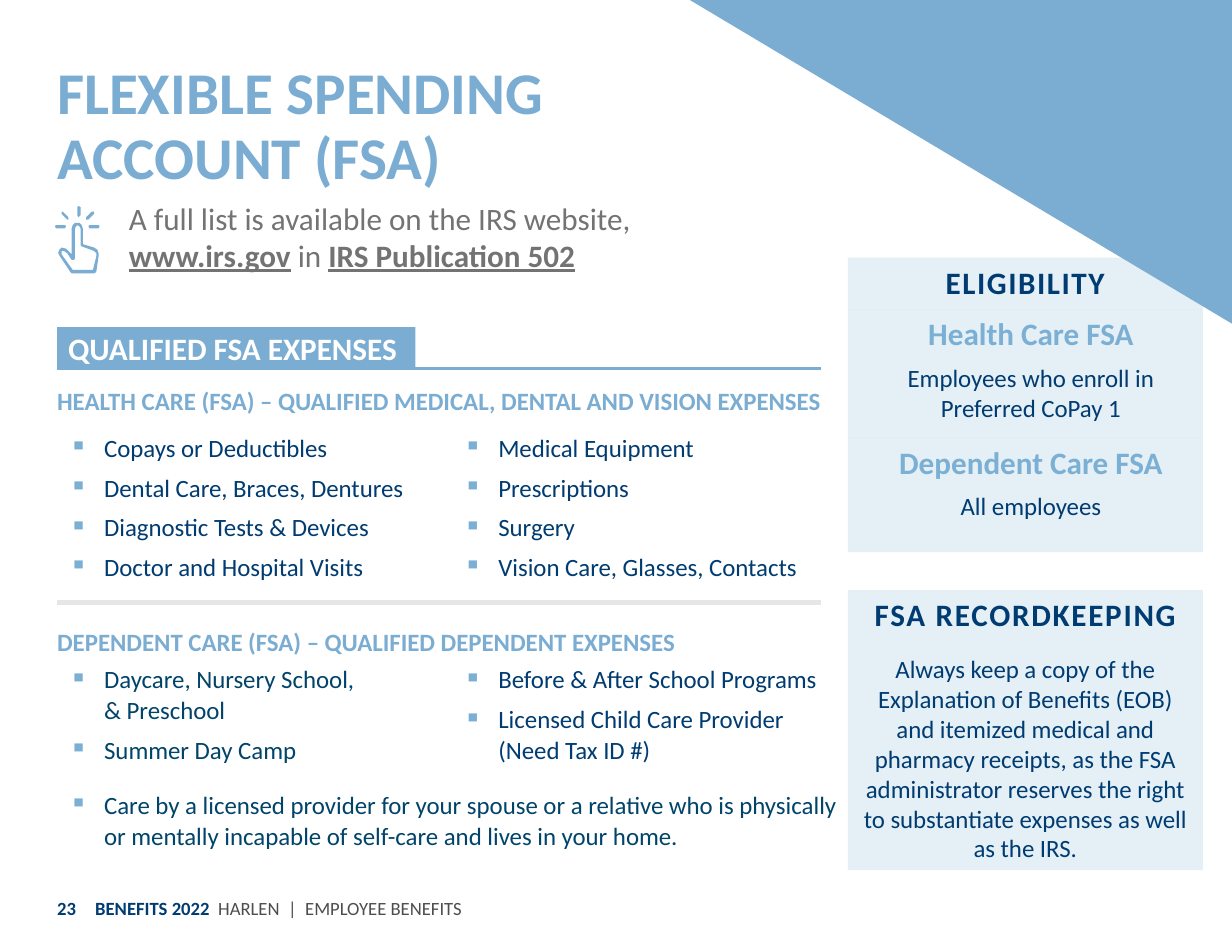
"""Build the flexible spending account benefits slide."""
from lxml import etree
from pptx import Presentation, util as u
from pptx.dml.color import RGBColor
from pptx.enum import shapes, text
from pptx.oxml.ns import qn

C = {"blue": "7BADD3", "sky": "7BAFD4", "navy": "003C71", "foot": "003B71", "teal": "00446A",
     "grey": "737373", "dark": "4D4D4E", "rule": "E6E6E6", "white": "FFFFFF"}
NO_GRID = "{2D5ABB26-0587-4C30-8999-92F81FD0307C}"
TOP, MIDDLE, BOTTOM = (text.MSO_ANCHOR.TOP, text.MSO_ANCHOR.MIDDLE, text.MSO_ANCHOR.BOTTOM)
CENTER = text.PP_ALIGN.CENTER
NONE, PAD, BOX, FOOT = (0, 0), (0.11, 0.06), (0.1, 0.05), (0, 0.05)
LEFT = 0.51

TITLE = "FLEXIBLE SPENDING ACCOUNT (FSA)"
INTRO = [("A full list is available on the IRS website,\n", False), ("www.irs.gov", True),
         (" in ", False), ("IRS Publication 502", True)]
BANNER = "QUALIFIED FSA EXPENSES"
EXPENSES = [
    (0.35, "HEALTH CARE (FSA) – QUALIFIED MEDICAL, DENTAL AND VISION EXPENSES", MIDDLE),
    (1.56, [("navy", ["Copays or Deductibles", "Dental Care, Braces, Dentures",
                      "Diagnostic Tests & Devices", "Doctor and Hospital Visits"]),
            ("navy", ["Medical Equipment", "Prescriptions", "Surgery",
                      "Vision Care, Glasses, Contacts"])], MIDDLE),
    (0.56, "DEPENDENT CARE (FSA) – QUALIFIED DEPENDENT EXPENSES", BOTTOM),
    (0.98, [("teal", ["Daycare, Nursery School,\n& Preschool", "Summer Day Camp"]),
            ("navy", ["Before & After School Programs",
                      "Licensed Child Care Provider\n(Need Tax ID #)"])], MIDDLE),
    (0.87, [("teal", ["Care by a licensed provider for your spouse or a relative who is "
                      "physically\nor mentally incapable of self-care and lives in your home."])],
     MIDDLE),
]
ELIGIBILITY = [
    (0.45, [("ELIGIBILITY", 20, "navy", True, 1)], MIDDLE),
    (1.15, [("Health Care FSA", 20, "sky", True),
            ("Employees who enroll in\nPreferred CoPay 1", 16, "navy")], TOP),
    (1.02, [("Dependent Care FSA", 20, "sky", True), ("All employees", 16, "navy")], TOP),
]
RECORDS = [
    ("FSA RECORDKEEPING", 20, "navy", True, 1.1),
    ("Always keep a copy of the Explanation of Benefits (EOB) and itemized medical and pharmacy "
     "receipts, as the FSA administrator reserves the right to substantiate expenses as well "
     "as the IRS.", 16, "navy"),
]
FOOTER = [("BENEFITS 2022", 12, "foot", True), (" ", 12, "foot", True, 2.7),
          ("HARLEN", 12, "dark"), (" |", 12, "dark", False, 2.7),
          (" EMPLOYEE BENEFITS", 12, "dark")]
HAND = [
    [(84, 244), (64, 244), (63, 243), (53, 228), (52, 226), (53, 223), (55, 221), (59, 222),
     (64, 227), (64, 204), (65, 201), (67, 199), (71, 199), (73, 201), (74, 204), (74, 218),
     (84, 221), (87, 223), (88, 226), (88, 229), (86, 243)],
    [(65, 241), (83, 241), (86, 229), (86, 226), (84, 224), (73, 220), (72, 219), (72, 204),
     (71, 202), (69, 201), (68, 202), (67, 204), (67, 231), (66, 232), (64, 232), (60, 226),
     (57, 224), (55, 224), (55, 227)],
]
RAYS = [
    [(88, 204), (80, 204), (79, 202), (80, 201), (88, 201), (89, 202)],
    [(78, 196), (77, 196), (77, 194), (82, 189), (84, 189), (84, 191), (79, 196)],
    [(70, 194), (69, 192), (69, 185), (70, 184), (72, 185), (72, 192)],
    [(60, 196), (55, 191), (55, 189), (56, 189), (61, 194), (61, 196)],
    [(58, 204), (50, 204), (49, 202), (50, 201), (58, 201), (59, 202)],
]


def rgb(name):
    return RGBColor.from_string(C[name])


def place(sp, *box):
    sp.left, sp.top, sp.width, sp.height = map(u.Inches, box)


def add_run(p, words, size, color, bold=False, spacing=0, underline=False):
    for i, line in enumerate(words.split("\n")):
        if i:
            p.add_line_break()
            br = p._p.findall(qn("a:br"))[-1]
            etree.SubElement(br, qn("a:rPr"), sz=str(size * 100))
        if not line:
            continue
        r = p.add_run()
        r.text = line
        f = r.font
        f.name, f.size, f.bold, f.underline = "Calibri", u.Pt(size), bold, underline
        f.color.rgb = rgb(color)
        if spacing:
            r._r.get_or_add_rPr().set("spc", str(round(spacing * 100)))


def indent(p, margin, hang=0, bullet=None):
    pPr = p._p.get_or_add_pPr()
    pPr.set("marL", str(u.Inches(margin)))
    pPr.set("indent", str(u.Inches(-hang)))
    if bullet:
        clr = etree.SubElement(pPr, qn("a:buClr"))
        etree.SubElement(clr, qn("a:srgbClr"), val=C["sky"])
        etree.SubElement(pPr, qn("a:buChar"), char=bullet)
    else:
        etree.SubElement(pPr, qn("a:buNone"))


def paragraphs(tf, items, before=6):
    for i, runs in enumerate(items):
        p = tf.add_paragraph() if i else tf.paragraphs[0]
        p.space_before = u.Pt(before if i else 0)
        for run in runs:
            add_run(p, *run)
    return tf.paragraphs


def frame(tf, inset, anchor=TOP):
    tf.margin_left = tf.margin_right = u.Inches(inset[0])
    tf.margin_top = tf.margin_bottom = u.Inches(inset[1])
    tf.vertical_anchor = anchor
    if hasattr(tf, "word_wrap"):
        tf.word_wrap = True
        tf.auto_size = text.MSO_AUTO_SIZE.NONE


def tint(fill, name, alpha=None):
    fill.solid()
    fill.fore_color.rgb = rgb(name)
    if alpha:
        clr = fill._xPr.find(".//" + qn("a:srgbClr"))
        etree.SubElement(clr, qn("a:alpha"), val=str(alpha * 1000))


def add_shape(s, kind, box, color, alpha=None):
    sp = s.shapes.add_shape(kind, *map(u.Inches, box))
    sp.shadow.inherit = False
    tint(sp.fill, color, alpha)
    sp.line.fill.background()
    return sp


def add_label(s, box, runs, inset):
    sp = s.shapes.add_textbox(*map(u.Inches, box))
    frame(sp.text_frame, inset, MIDDLE)
    paragraphs(sp.text_frame, [runs])


def add_rule(s, y, color, width):
    ln = s.shapes.add_connector(shapes.MSO_CONNECTOR.STRAIGHT, u.Inches(LEFT), u.Inches(y),
                                u.Inches(7.33), u.Inches(y))
    ln.line.color.rgb, ln.line.width = rgb(color), u.Pt(width)
    etree.SubElement(ln._element.spPr, qn("a:effectLst"))


def add_table(s, x, y, widths, heights):
    gf = s.shapes.add_table(len(heights), len(widths), *map(
        u.Inches, (x, y, sum(widths), sum(heights))))
    tbl = gf.table
    gf._element.find(".//" + qn("a:tableStyleId")).text = NO_GRID
    tbl.first_row = tbl.horz_banding = False
    for col, w in zip(tbl.columns, widths):
        col.width = u.Inches(w)
    for row, h in zip(tbl.rows, heights):
        row.height = u.Inches(h)
    for cell in tbl.iter_cells():
        cell.fill.background()
    return tbl


def add_expenses(s):
    tbl = add_table(s, LEFT, 3.41, (3.52, 3.88), [row[0] for row in EXPENSES])
    for i, (_, content, anchor) in enumerate(EXPENSES):
        heading = isinstance(content, str)
        if heading or len(content) == 1:
            tbl.cell(i, 0).merge(tbl.cell(i, 1))
        if heading:
            frame(tbl.cell(i, 0), NONE, anchor)
            paragraphs(tbl.cell(i, 0).text_frame, [[(content, 16, "blue", True)]])
            continue
        for j, (color, items) in enumerate(content):
            frame(tbl.cell(i, j), PAD, anchor)
            for p in paragraphs(tbl.cell(i, j).text_frame, [[(t, 16, color)] for t in items]):
                indent(p, 0.31, 0.31, "▪")


def add_eligibility(s):
    tbl = add_table(s, 7.57, 2.3, (3.17,), [row[0] for row in ELIGIBILITY])
    for i, (_, items, anchor) in enumerate(ELIGIBILITY):
        cell = tbl.cell(i, 0)
        frame(cell, PAD, anchor)
        tint(cell.fill, "sky", 20)
        for p in paragraphs(cell.text_frame, [[item] for item in items]):
            p.alignment = CENTER
            indent(p, 0.1 if i else 0)


def add_icon(s):
    group = s.shapes.add_group_shape()
    for contours in [HAND] + [[ray] for ray in RAYS]:
        fb = group.shapes.build_freeform(*contours[0][0], scale=u.Inches(0.01))
        for i, points in enumerate(contours):
            if i:
                fb.move_to(*points[0])
            fb.add_line_segments(points[1:], close=True)
        sp = fb.convert_to_shape()
        sp.shadow.inherit = False
        tint(sp.fill, "blue")
        sp.line.fill.background()


def main():
    prs = Presentation()
    prs.slide_width, prs.slide_height = u.Inches(11), u.Inches(8.5)
    s = prs.slides.add_slide(prs.slide_layouts[1])
    title, body = s.shapes.title, s.placeholders[1]

    place(title, LEFT, 0.54, 6.15, 1.18)
    frame(title.text_frame, NONE)
    p = paragraphs(title.text_frame, [[(TITLE, 38, "blue", True)]])[0]
    p.alignment, p.line_spacing = text.PP_ALIGN.LEFT, u.Pt(42)

    place(body, 1.15, 1.78, 7.43, 0.61)
    frame(body.text_frame, NONE)
    runs = [(t, 20, "grey", link, 0, link) for t, link in INTRO]
    indent(paragraphs(body.text_frame, [runs])[0], 0)

    add_expenses(s)
    records = add_shape(s, shapes.MSO_SHAPE.RECTANGLE, (7.57, 5.27, 3.17, 2.5), "sky", 20)
    frame(records.text_frame, BOX)
    for p in paragraphs(records.text_frame, [[item] for item in RECORDS], 13.4):
        p.alignment = CENTER
    add_rule(s, 5.38, "rule", 3)
    corner = add_shape(s, shapes.MSO_SHAPE.RIGHT_TRIANGLE, (6.16, 0, 4.84, 2.89), "blue")
    corner.rotation = 180
    add_shape(s, shapes.MSO_SHAPE.RECTANGLE, (LEFT, 2.92, 3.2, 0.37), "blue")
    add_label(s, (LEFT, 2.89, 3.2, 0.44), [(BANNER, 20, "white", True)], BOX)
    add_rule(s, 3.29, "blue", 2.25)
    add_icon(s)
    add_label(s, (0.85, 7.88, 4.39, 0.45), FOOTER, FOOT)
    add_label(s, (LEFT, 7.88, 0.49, 0.45), [("23", 12, "foot", True)], FOOT)
    add_eligibility(s)
    prs.save("out.pptx")


if __name__ == "__main__":
    main()
